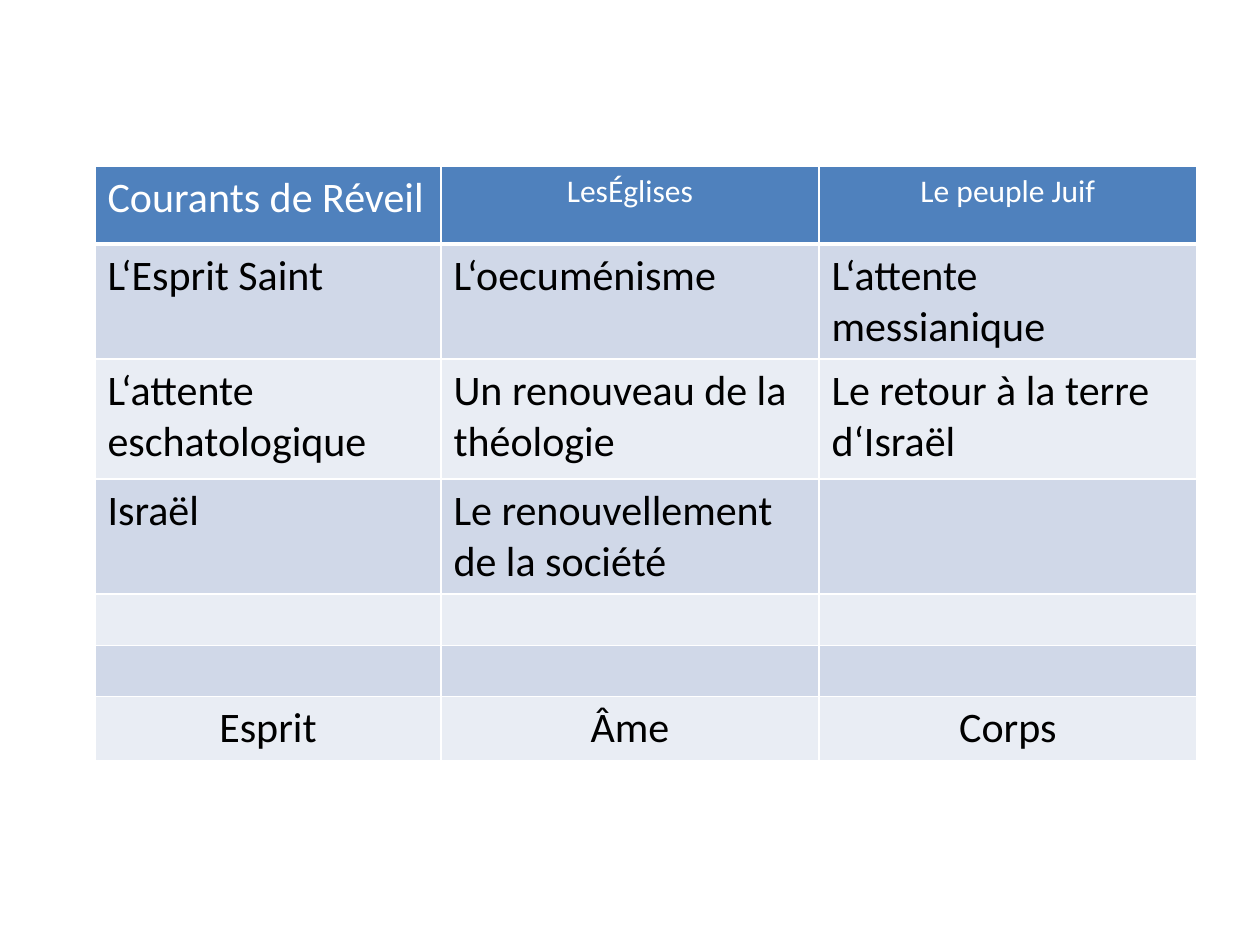
import pptx
import pptx.dml.color
import pptx.enum.text
import pptx.oxml.ns
import pptx.util
import lxml.etree

RGBColor = pptx.dml.color.RGBColor
WHITE = RGBColor(0xFF, 0xFF, 0xFF)
BLACK = RGBColor(0x00, 0x00, 0x00)
HEADER_BLUE = RGBColor(0x4F, 0x81, 0xBD)
BAND_DARK = RGBColor(0xD0, 0xD8, 0xE8)
BAND_LIGHT = RGBColor(0xE9, 0xED, 0xF4)
EMU_PER_PX = 914400 // 126

COLUMN_WIDTHS = [346, 378, 378]
ROW_HEIGHTS = [78, 115, 120, 115, 51, 51, 64]
ROWS = [
    ["Courants de Réveil", "LesÉglises", "Le peuple Juif"],
    ["L‘Esprit Saint", "L‘oecuménisme", "L‘attente messianique"],
    ["L‘attente eschatologique", "Un renouveau de la théologie", "Le retour à la terre d‘Israël"],
    ["Israël", "Le renouvellement de la société", ""],
    ["", "", ""],
    ["", "", ""],
    ["Esprit", "Âme", "Corps"],
]


def px(length):
    return pptx.util.Emu(length * EMU_PER_PX)


class SlideBuilder:
    font_name = "Calibri"

    def __init__(self, slide):
        self.slide = slide

    def border(self, cell, side, points):
        qn = pptx.oxml.ns.qn
        properties = cell._tc.get_or_add_tcPr()
        line = lxml.etree.SubElement(properties, qn("a:" + side), w=str(pptx.util.Pt(points)))
        fill = lxml.etree.SubElement(line, qn("a:solidFill"))
        lxml.etree.SubElement(fill, qn("a:srgbClr"), val=str(WHITE))

    def cell(self, cell, text, fill, color, size, centered, bottom_border):
        for side in ("lnL", "lnR", "lnT"):
            self.border(cell, side, 1)
        self.border(cell, "lnB", bottom_border)
        cell.fill.solid()
        cell.fill.fore_color.rgb = fill
        if not text:
            return
        cell.text_frame.text = text
        paragraph = cell.text_frame.paragraphs[0]
        if centered:
            paragraph.alignment = pptx.enum.text.PP_ALIGN.CENTER
        for run in paragraph.runs:
            run.font.name = self.font_name
            run.font.size = pptx.util.Pt(size)
            run.font.bold = False
            run.font.color.rgb = color

    def table(self, left, top, rows, widths, heights):
        shape = self.slide.shapes.add_table(
            len(rows), len(widths), px(left), px(top), px(sum(widths)), px(sum(heights)))
        table = shape.table
        for column, width in zip(table.columns, widths):
            column.width = px(width)
        for row, height in zip(table.rows, heights):
            row.height = px(height)
        last = len(rows) - 1
        for row_index, texts in enumerate(rows):
            header = row_index == 0
            band = BAND_DARK if row_index % 2 else BAND_LIGHT
            for column_index, text in enumerate(texts):
                self.cell(
                    table.cell(row_index, column_index), text,
                    fill=HEADER_BLUE if header else band,
                    color=WHITE if header else BLACK,
                    size=18 if header and column_index else 24,
                    centered=row_index == last or (header and column_index > 0),
                    bottom_border=3 if header else 1)


def main():
    presentation = pptx.Presentation()
    presentation.slide_width = pptx.util.Inches(10)
    presentation.slide_height = pptx.util.Inches(7.5)
    slide = presentation.slides.add_slide(presentation.slide_layouts[6])
    SlideBuilder(slide).table(95, 166, ROWS, COLUMN_WIDTHS, ROW_HEIGHTS)
    presentation.save("out.pptx")


if __name__ == "__main__":
    main()
